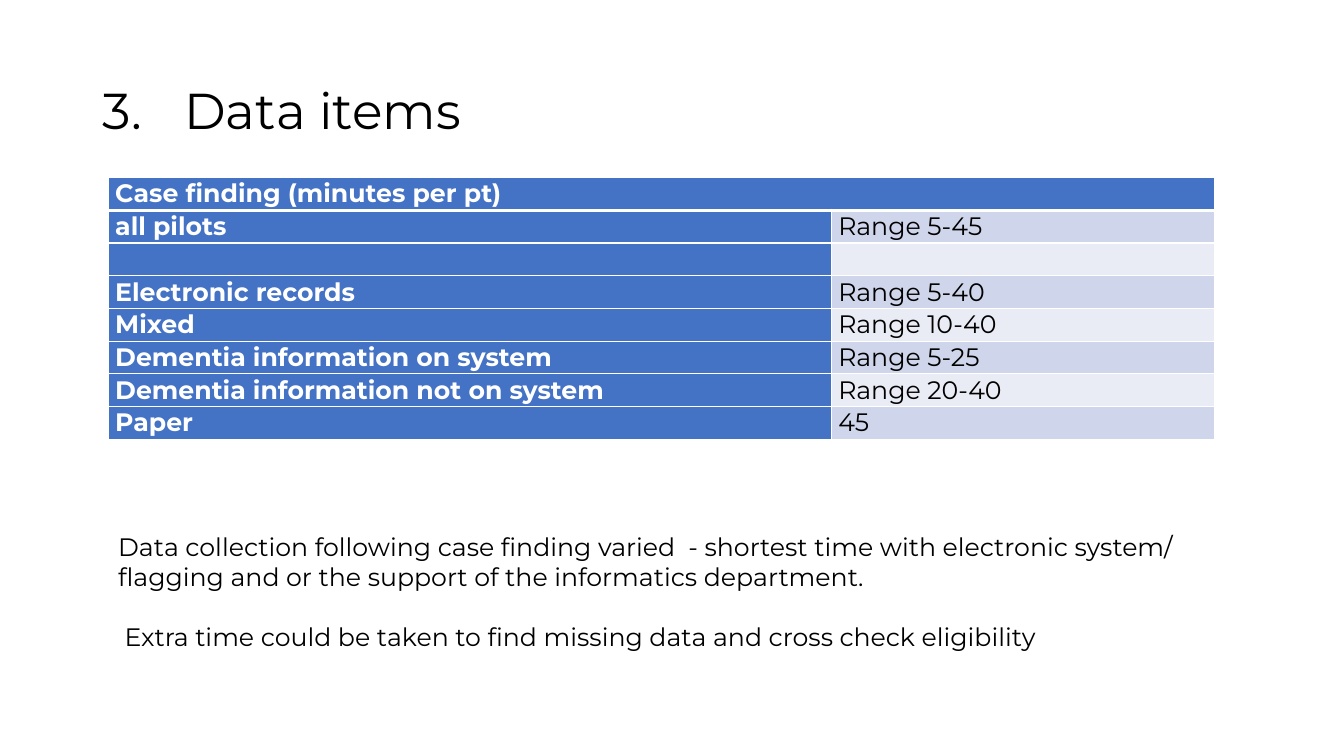
from lxml.etree import SubElement
from pptx import Presentation
from pptx.dml.color import RGBColor
from pptx.enum.text import MSO_ANCHOR as Anchor
from pptx.oxml import parse_xml
from pptx.oxml.ns import nsdecls, qn
from pptx.util import Emu, Inches, Pt

BLUE, WHITE, BLACK = "4472C4", "FFFFFF", "000000"
BANDS = "CFD5EA", "E9EBF5"
HEADING = "Case finding (minutes per pt)"
RANGES = [
    ("all pilots", "Range 5-45"),
    ("", ""),
    ("Electronic records", "Range 5-40"),
    ("Mixed", "Range 10-40"),
    ("Dementia information on system", "Range 5-25"),
    ("Dementia information not on system", "Range 20-40"),
    ("Paper", "45"),
]
NOTES = [
    "Data collection following case finding varied  - shortest time with electronic system/ "
    "flagging and or the support of the informatics department.",
    " Extra time could be taken to find missing data and cross check eligibility",
]


def rgb(color):
    return RGBColor.from_string(color)


def write(p, text, size=18, color=BLACK, bold=False, font="Montserrat"):
    r = p.add_run()
    r.text = text
    r.font.name, r.font.size, r.font.bold = font, Pt(size), bold
    r.font.color.rgb = rgb(color)


def number(p, start, indent):
    """Number a paragraph from start, with a hanging indent in inches."""
    pPr = p._p.get_or_add_pPr()
    pPr.set("marL", str(Inches(indent)))
    pPr.set("indent", str(-Inches(indent)))
    SubElement(pPr, qn("a:buFont"), typeface="+mj-lt")
    SubElement(pPr, qn("a:buAutoNum"), type="arabicPeriod", startAt=str(start))


def border(cell, **widths):
    """Draw white cell borders; widths are in points, keyed by side."""
    tcPr = cell._tc.get_or_add_tcPr()
    for i, side in enumerate("LRTB"):
        tcPr.insert(i, parse_xml(
            f'<a:ln{side} {nsdecls("a")} w="{Pt(widths.get(side, 1))}">'
            f'<a:solidFill><a:srgbClr val="{WHITE}"/></a:solidFill></a:ln{side}>'))


class Deck:
    """Places elements on a grid of 100 columns by 100 rows."""

    def __init__(self, width=13.33, height=7.5):
        self.prs = Presentation()
        self.prs.slide_width, self.prs.slide_height = Inches(width), Inches(height)
        self.s = self.prs.slides.add_slide(self.prs.slide_layouts[6])

    def x(self, columns):
        return Emu(round(self.prs.slide_width * columns / 100))

    def y(self, rows):
        return Emu(round(self.prs.slide_height * rows / 100))

    def box(self, x, y, w, h):
        return self.x(x), self.y(y), self.x(w), self.y(h)

    def text(self, x, y, w, h, lines, gap=0, anchor=Anchor.TOP, **style):
        """Add a text box with gap points between its paragraphs."""
        tf = self.s.shapes.add_textbox(*self.box(x, y, w, h)).text_frame
        tf.word_wrap, tf.vertical_anchor = True, anchor
        for i, line in enumerate(lines):
            p = tf.add_paragraph() if i else tf.paragraphs[0]
            if i:
                p.space_before = Pt(gap)
            write(p, line, **style)
        return tf

    def cell(self, cell, text, fill, **style):
        cell.margin_left = cell.margin_right = Inches(0.07)
        cell.margin_top = cell.margin_bottom = Inches(0.01)
        cell.vertical_anchor = Anchor.BOTTOM
        cell.fill.solid()
        cell.fill.fore_color.rgb = rgb(fill)
        if text:
            write(cell.text_frame.paragraphs[0], text, **style)

    def table(self, x, y, columns, row, heading, body):
        """Add a two-column table under a heading that spans it."""
        n = len(body) + 1
        t = self.s.shapes.add_table(n, 2, *self.box(x, y, sum(columns), row * n)).table
        for col, width in zip(t.columns, columns):
            col.width = self.x(width)
        t.cell(0, 0).merge(t.cell(0, 1))
        for c in t.rows[0].cells:
            self.cell(c, "" if c.is_spanned else heading, BLUE, color=WHITE, bold=True)
            border(c, B=3)
        for i, (label, value) in enumerate(body):
            left, right = t.rows[i + 1].cells
            self.cell(left, label, BLUE, color=WHITE, bold=True)
            self.cell(right, value, BANDS[i % 2])
            for c in (left, right):
                border(c, T=1 if i else 3)


def main():
    deck = Deck()
    title = deck.text(6.9, 5.33, 86.25, 19.33, ["Data items"], size=36, anchor=Anchor.MIDDLE)
    title.paragraphs[0].line_spacing = 0.9
    number(title.paragraphs[0], start=3, indent=0.81)
    deck.table(8.05, 23.5, (53.8, 28.5), 4.33, HEADING, RANGES)
    deck.text(8.05, 69.6, 82.3, 17.5, NOTES, gap=21.5)
    deck.prs.save("out.pptx")


if __name__ == "__main__":
    main()
